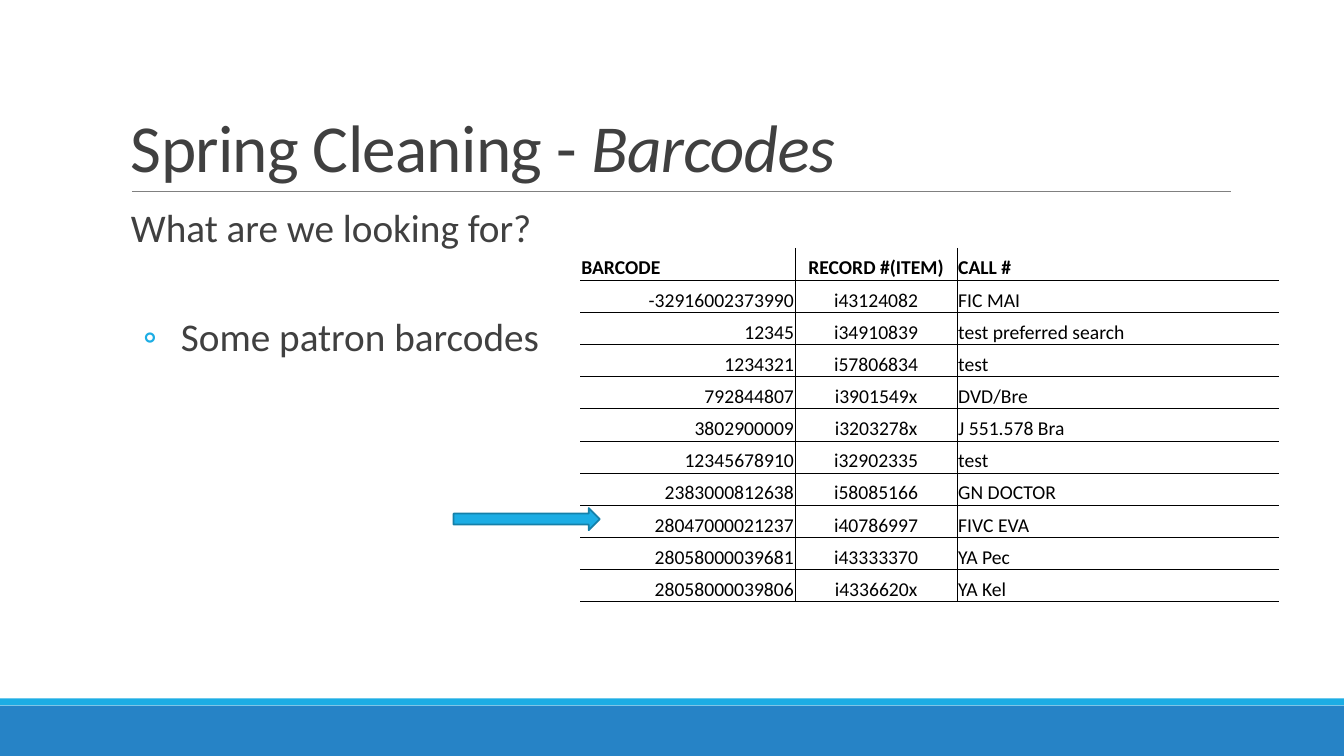
from lxml.etree import SubElement
from pptx import Presentation
from pptx.dml.color import RGBColor
from pptx.enum.shapes import MSO_CONNECTOR as Connector, MSO_SHAPE as Shape
from pptx.enum.text import MSO_ANCHOR as Anchor, PP_ALIGN as Align
from pptx.oxml.ns import qn
from pptx.util import Pt

NO_GRID_STYLE = "{2D5ABB26-0587-4C30-8999-92F81FD0307C}"


def color(hex_value):
    return RGBColor.from_string(hex_value)


def apply(target, formats):
    for name, value in formats.items():
        setattr(target, name, value)


class SlideBuilder:
    font = "Calibri"
    ink, black, rule_gray = "404040", "000000", "808080"
    sky, blue, arrow_edge = "1CADE4", "2683C6", "1580A9"

    def __init__(self, slide):
        self.slide = slide
        self.shapes = slide.shapes

    def block(self, kind, box, fill, edge=None, width=1.25):
        block = self.shapes.add_shape(kind, *map(Pt, box))
        block.shadow.inherit = False
        block.fill.solid()
        block.fill.fore_color.rgb = color(fill)
        if edge:
            block.line.color.rgb = color(edge)
            block.line.width = Pt(width)
        else:
            block.line.fill.background()

    def rule(self, left, right, y):
        rule = self.shapes.add_connector(
            Connector.STRAIGHT, Pt(left), Pt(y), Pt(right), Pt(y))
        rule.line.color.rgb = color(self.rule_gray)
        rule.line.width = Pt(0.5)
        SubElement(rule._element.spPr, qn("a:effectLst"))

    def text_box(self, box, **frame_formats):
        frame = self.shapes.add_textbox(*map(Pt, box)).text_frame
        apply(frame, {"word_wrap": True, **frame_formats})
        return frame

    def run(self, paragraph, text, size, ink, **font_formats):
        run = paragraph.add_run()
        run.text = text
        apply(run.font, {"name": self.font, "size": Pt(size), **font_formats})
        run.font.color.rgb = color(ink)
        return run

    def indent(self, paragraph, left, hanging=0, bullet=None):
        properties = paragraph._p.get_or_add_pPr()
        properties.set("marL", str(Pt(left)))
        properties.set("indent", str(-Pt(hanging)))
        if bullet:
            bullet_color = SubElement(properties, qn("a:buClr"))
            SubElement(bullet_color, qn("a:srgbClr"), val=self.sky)
            SubElement(properties, qn("a:buFont"), typeface=self.font)
            SubElement(properties, qn("a:buChar"), char=bullet)

    def border(self, cell, sides):
        properties = cell._tc.get_or_add_tcPr()
        for side in sides:
            line = SubElement(properties, qn(f"a:ln{side}"), w=str(Pt(0.5)))
            fill = SubElement(line, qn("a:solidFill"))
            SubElement(fill, qn("a:srgbClr"), val=self.black)

    def table(self, left, top, widths, row_height, rows, aligns):
        frame = self.shapes.add_table(
            len(rows), len(widths), Pt(left), Pt(top),
            Pt(sum(widths)), Pt(row_height * len(rows)))
        table = frame.table
        table._tbl.tblPr.find(qn("a:tableStyleId")).text = NO_GRID_STYLE
        apply(table, {"first_row": False, "horz_banding": False})
        for column, width in zip(table.columns, widths):
            column.width = Pt(width)
        for r, values in enumerate(rows):
            table.rows[r].height = Pt(row_height)
            for c, value in enumerate(values):
                cell = table.cell(r, c)
                apply(cell, {"vertical_anchor": Anchor.BOTTOM,
                             "margin_left": Pt(0.7), "margin_right": Pt(0.7),
                             "margin_top": Pt(0.7), "margin_bottom": 0})
                # Inner grid lines plus a closing line at the bottom
                self.border(cell, "L" * (c > 0) + "R" * (c < len(widths) - 1)
                            + "T" * (r > 0) + "B")
                cell.fill.background()
                paragraph = cell.text_frame.paragraphs[0]
                header = r == 0
                paragraph.alignment = (
                    Align.LEFT if header and c == 0 else aligns[c])
                self.run(paragraph, value, 14, self.black, bold=header)


def main():
    deck = Presentation()
    apply(deck, {"slide_width": Pt(960), "slide_height": Pt(540)})
    page = SlideBuilder(deck.slides.add_slide(deck.slide_layouts[6]))

    # Footer bands and title rule
    page.block(Shape.RECTANGLE, (0, 504, 960, 36), page.blue)
    page.block(Shape.RECTANGLE, (0, 498.8, 960, 5.04), page.sky)
    page.rule(94.3, 879, 136.8)

    # Title
    title = page.text_box((86.4, 22.3, 792, 114.5),
                          vertical_anchor=Anchor.BOTTOM).paragraphs[0]
    title.line_spacing = 0.85
    for words, italic in (("Spring Cleaning - ", False), ("Barcodes", True)):
        part = page.run(title, words, 48, page.ink, italic=italic)
        part.font._element.set("spc", "-50")

    # Question and its answer
    body = page.text_box((86.4, 145.4, 388.8, 316.8),
                         margin_left=0, margin_right=0)
    question, answer = body.paragraphs[0], body.add_paragraph()
    apply(question, {"line_spacing": 0.9, "space_after": Pt(2)})
    apply(answer, {"line_spacing": 0.9, "space_before": Pt(46),
                   "space_after": Pt(4)})
    page.indent(question, 7.2)
    page.indent(answer, 42.9, 27, "◦")
    page.run(question, "What are we looking for?", 28, page.ink)
    page.run(answer, "Some patron barcodes", 28, page.ink)

    # Barcode list
    records = [
        ("BARCODE", "RECORD #(ITEM)", "CALL #"),
        ("-32916002373990", "i43124082", "FIC MAI"),
        ("12345", "i34910839", "test preferred search"),
        ("1234321", "i57806834", "test"),
        ("792844807", "i3901549x", "DVD/Bre"),
        ("3802900009", "i3203278x", "J 551.578 Bra"),
        ("12345678910", "i32902335", "test"),
        ("2383000812638", "i58085166", "GN DOCTOR"),
        ("28047000021237", "i40786997", "FIVC EVA"),
        ("28058000039681", "i43333370", "YA Pec"),
        ("28058000039806", "i4336620x", "YA Kel"),
    ]
    page.table(414.5, 177.1, (153.4, 115.9, 229.7), 22.98, records,
               (Align.RIGHT, Align.CENTER, Align.LEFT))

    # Arrow to the first patron barcode
    page.block(Shape.RIGHT_ARROW, (324, 362.9, 104.4, 15.8),
               page.sky, page.arrow_edge)

    deck.save("out.pptx")


if __name__ == "__main__":
    main()
